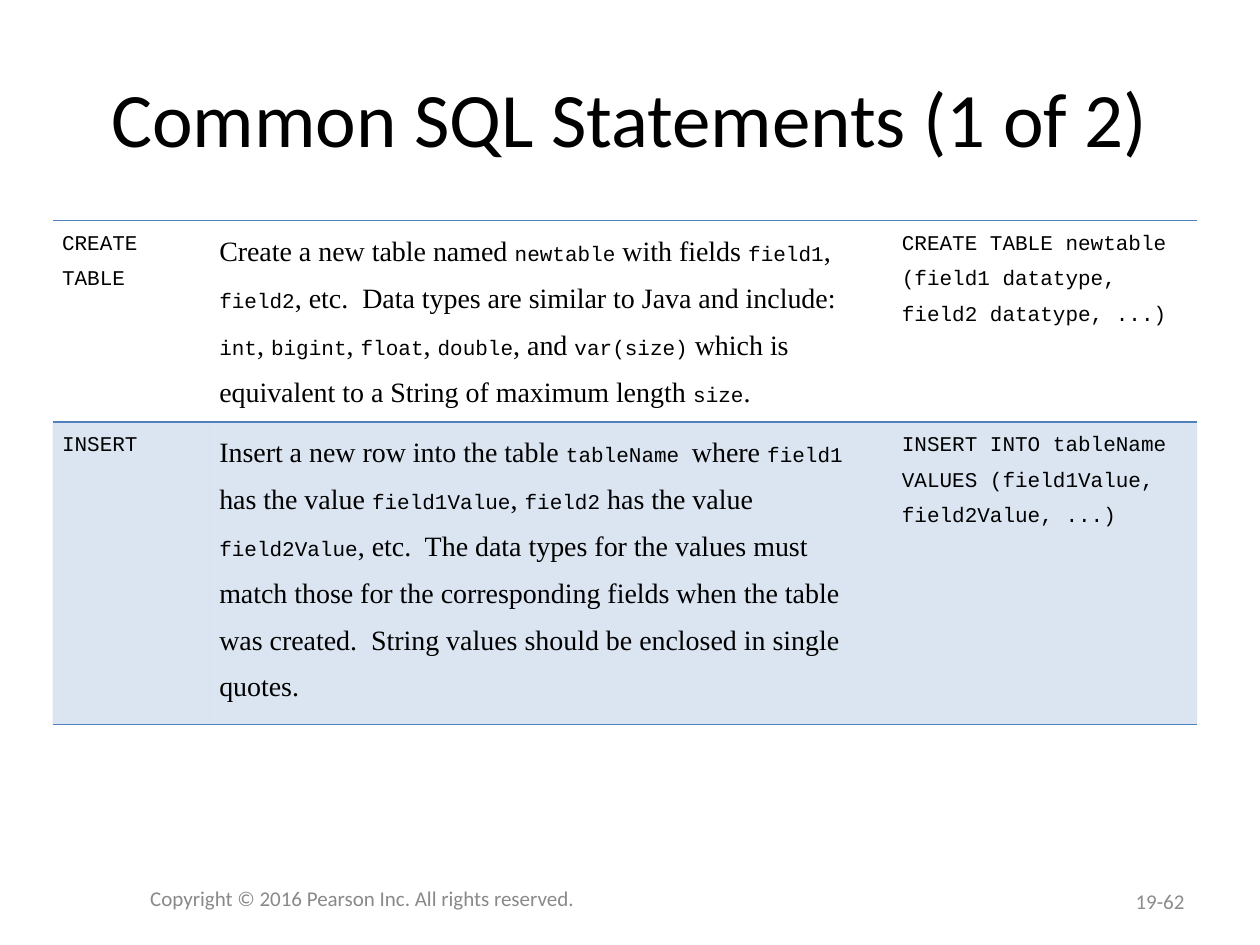
"""Build the slide on common SQL statements."""
import dataclasses

import lxml.etree
import pptx
import pptx.dml.color
import pptx.enum.text
import pptx.oxml
import pptx.oxml.ns
import pptx.util

Cm = pptx.util.Cm
Pt = pptx.util.Pt
RGB = pptx.dml.color.RGBColor
ALIGN = pptx.enum.text.PP_ALIGN
qn = pptx.oxml.ns.qn


@dataclasses.dataclass(frozen=True)
class Theme:
    ink: str = "000000"
    accent: str = "4F81BD"
    copyright_grey: str = "898989"
    number_grey: str = "8C8C8C"
    heading_font: str = "Calibri"
    prose_font: str = "Times New Roman"
    code_font: str = "Courier New"
    title_size: int = 44
    prose_size: int = 16
    small_size: int = 12
    band_alpha: int = 20
    plain_table: str = "{2D5ABB26-0587-4C30-8999-92F81FD0307C}"


class StatementSlide:
    def __init__(self, slide, theme):
        self.slide = slide
        self.theme = theme

    def style(self, run, font, size, color):
        run.font.name = font
        run.font.size = Pt(size)
        run.font.color.rgb = RGB.from_string(color)

    def label(self, text, left, top, width, height, size, color, align):
        box = self.slide.shapes.add_textbox(Cm(left), Cm(top), Cm(width), Cm(height))
        frame = box.text_frame
        frame.word_wrap = True
        frame.vertical_anchor = pptx.enum.text.MSO_ANCHOR.MIDDLE
        frame.text = text
        paragraph = frame.paragraphs[0]
        paragraph.alignment = align
        self.style(paragraph.runs[0], self.theme.heading_font, size, color)

    def mixed_text(self, paragraph, marked):
        theme = self.theme
        for index, piece in enumerate(marked.split("`")):
            is_code = index % 2 == 1
            font = theme.code_font if is_code else theme.prose_font
            size = theme.small_size if is_code else theme.prose_size
            for line_index, line in enumerate(piece.split("\n")):
                if line_index:
                    paragraph.add_line_break()
                if line:
                    run = paragraph.add_run()
                    run.text = line
                    self.style(run, font, size, theme.ink)

    def rules(self, cell):
        properties = cell._tc.get_or_add_tcPr()
        for index, edge in enumerate(("a:lnT", "a:lnB")):
            line = lxml.etree.Element(qn(edge), w=str(Pt(1)))
            fill = lxml.etree.SubElement(line, qn("a:solidFill"))
            lxml.etree.SubElement(fill, qn("a:srgbClr"), val=self.theme.accent)
            properties.insert(index, line)

    def band(self, cell):
        cell.fill.solid()
        cell.fill.fore_color.rgb = RGB.from_string(self.theme.accent)
        color = cell._tc.tcPr.find(".//" + qn("a:srgbClr"))
        lxml.etree.SubElement(color, qn("a:alpha"), val=str(self.theme.band_alpha * 1000))

    def cell(self, cell, marked, banded):
        cell.margin_left = cell.margin_right = Cm(0.19)
        cell.margin_top = cell.margin_bottom = 0
        paragraph = cell.text_frame.paragraphs[0]
        paragraph.line_spacing = 1.5
        paragraph.space_after = Pt(6)
        self.mixed_text(paragraph, marked)
        if banded:
            self.band(cell)
        else:
            cell.fill.background()
        self.rules(cell)

    def table(self, statements, left, top, widths, heights):
        grid = self.slide.shapes.add_table(
            len(heights), len(widths), Cm(left), Cm(top), Cm(sum(widths)), Cm(sum(heights))
        ).table
        grid.first_row = False
        grid.horz_banding = False
        grid._tbl.tblPr.find(qn("a:tableStyleId")).text = self.theme.plain_table
        for column, width in zip(grid.columns, widths):
            column.width = Cm(width)
        for row_index, (row, height) in enumerate(zip(grid.rows, heights)):
            row.height = Cm(height)
            for cell, marked in zip(row.cells, statements[row_index]):
                self.cell(cell, marked, banded=row_index % 2 == 1)


STATEMENTS = [
    (
        "`CREATE TABLE`",
        "Create a new table named `newtable` with fields `field1`, `field2`, etc.  "
        "Data types are similar to Java and include: `int`, `bigint`, `float`, `double`, "
        "and `var(size)` which is equivalent to a String of maximum length `size`.",
        "`CREATE TABLE newtable\n(field1 datatype, field2 datatype, ...)`",
    ),
    (
        "`INSERT`",
        "Insert a new row into the table `tableName `where `field1` has the value "
        "`field1Value`, `field2` has the value `field2Value`, etc.  The data types for the "
        "values must match those for the corresponding fields when the table was created.  "
        "String values should be enclosed in single quotes.",
        "`INSERT INTO tableName\nVALUES (field1Value, field2Value, ...)`",
    ),
]


def main():
    deck = pptx.Presentation()
    deck.slide_width, deck.slide_height = Cm(25.4), Cm(19.05)
    theme = Theme()
    page = StatementSlide(deck.slides.add_slide(deck.slide_layouts[6]), theme)
    page.label("Common SQL Statements (1 of 2)", 1.27, 0.76, 22.86, 3.18,
               theme.title_size, theme.ink, ALIGN.CENTER)
    page.table(STATEMENTS, 1.06, 4.45, widths=(3.17, 13.76, 6.14), heights=(3.78, 5.64))
    page.label("19-62", 18.2, 17.66, 5.93, 1.01,
               theme.small_size, theme.number_grey, ALIGN.RIGHT)
    page.label("Copyright © 2016 Pearson Inc. All rights reserved.", 1.27, 17.6, 12.07, 1.01,
               theme.small_size, theme.copyright_grey, ALIGN.CENTER)
    deck.save("out.pptx")


if __name__ == "__main__":
    main()
